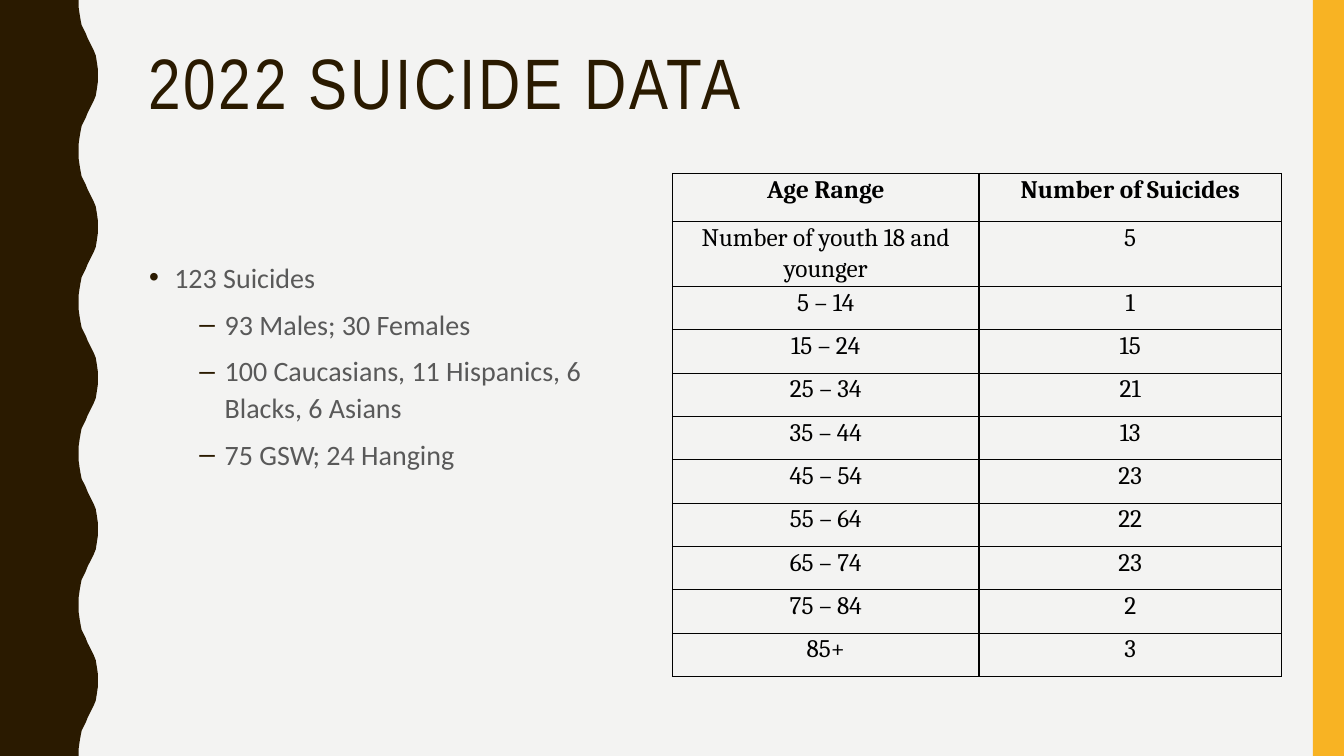
"""Build the slide on 2022 suicide data with a bullet list and an age table."""
from lxml import etree
from pptx import Presentation
from pptx.dml.color import RGBColor
from pptx.enum.shapes import MSO_SHAPE
from pptx.enum.text import MSO_ANCHOR, MSO_AUTO_SIZE, PP_ALIGN
from pptx.oxml.ns import qn
from pptx.util import Inches, Pt

RECT = MSO_SHAPE.RECTANGLE
TOP = MSO_ANCHOR.TOP
FIXED = MSO_AUTO_SIZE.NONE
LEFT, CENTER = PP_ALIGN.LEFT, PP_ALIGN.CENTER

TITLE = "2022 SUICIDE DATA"
POINTS = [
    (0, "123 Suicides"),
    (1, "93 Males; 30 Females"),
    (1, "100 Caucasians, 11 Hispanics, 6 Blacks, 6 Asians"),
    (1, "75 GSW; 24 Hanging"),
]
AGES = [
    ("Age Range", "Number of Suicides"),
    ("Number of youth 18 and younger", "5"),
    ("5 – 14", "1"),
    ("15 – 24", "15"),
    ("25 – 34", "21"),
    ("35 – 44", "13"),
    ("45 – 54", "23"),
    ("55 – 64", "22"),
    ("65 – 74", "23"),
    ("75 – 84", "2"),
    ("85+", "3"),
]
COLORS = {"back": "F3F3F2", "dark": "2A1A00", "gold": "F8B323",
          "text": "595959", "black": "000000"}
LEVELS = [("•", 0.25), ("–", 0.75)]
WIDTHS = (3.04, 3)
HEAD, ROW = 0.48, 0.43
WIDE, HIGH = 13.33, 7.5
PERIOD = 1.5
CURVE = [(0.78, 0), (0.78, 0.07), (0.79, 0.14), (0.8, 0.2), (0.81, 0.25),
         (0.83, 0.29), (0.85, 0.33), (0.87, 0.38), (0.89, 0.42), (0.91, 0.46),
         (0.93, 0.5), (0.95, 0.55), (0.96, 0.61), (0.97, 0.68), (0.97, 0.75)]


def color(name):
    return RGBColor.from_string(COLORS[name])


def paint(shape, name):
    shape.shadow.inherit = False
    shape.fill.solid()
    shape.fill.fore_color.rgb = color(name)
    shape.line.fill.background()


def write(para, text, font, size, name, align, space, bold=False):
    para.alignment = align
    para.line_spacing = space
    run = para.add_run()
    run.text = text
    run.font.name = font
    run.font.size = Pt(size)
    run.font.bold = bold
    run.font.color.rgb = color(name)
    return run


def bullet(para, level):
    mark, margin = LEVELS[level]
    para.level = level
    para.space_before = Pt(7)
    props = para._p.get_or_add_pPr()
    props.set("marL", str(Inches(margin)))
    props.set("indent", str(Inches(-0.25)))
    tint = etree.SubElement(props, qn("a:buClr"))
    etree.SubElement(tint, qn("a:srgbClr"), val=COLORS["dark"])
    etree.SubElement(props, qn("a:buFont"), typeface="Arial")
    etree.SubElement(props, qn("a:buChar"), char=mark)


def border(cell):
    props = cell._tc.get_or_add_tcPr()
    for place, side in enumerate(("lnL", "lnR", "lnT", "lnB")):
        line = etree.Element(qn(f"a:{side}"), w=str(Pt(1)))
        fill = etree.SubElement(line, qn("a:solidFill"))
        etree.SubElement(fill, qn("a:srgbClr"), val=COLORS["black"])
        props.insert(place, line)


def add_edges(slide):
    half = CURVE + [(x, PERIOD - y) for x, y in CURVE[-2::-1]]
    wave = [(x, y + turn * PERIOD)
            for turn in range(int(HIGH / PERIOD)) for x, y in half]
    spots = [(Inches(x), Inches(y)) for x, y in wave + [(0, HIGH)]]
    form = slide.shapes.build_freeform(0, 0)
    form.add_line_segments(spots, close=True)
    paint(form.convert_to_shape(), "dark")
    bar = slide.shapes.add_shape(
        RECT, Inches(13.02), 0, Inches(0.31), Inches(HIGH))
    paint(bar, "gold")


def add_title(slide):
    title = slide.shapes.title
    title.left, title.top = Inches(1.37), Inches(0.42)
    title.width, title.height = Inches(11.13), Inches(1.63)
    frame = title.text_frame
    frame.vertical_anchor = TOP
    frame.auto_size = FIXED
    run = write(frame.paragraphs[0], TITLE, "Arial Narrow", 51, "dark", LEFT, 0.9)
    run.font._element.set("spc", "200")


def add_points(slide):
    box = slide.shapes.add_textbox(
        Inches(1.38), Inches(2.5), Inches(5.25), Inches(3.96))
    frame = box.text_frame
    frame.word_wrap = True
    for index, (level, text) in enumerate(POINTS):
        para = frame.add_paragraph() if index else frame.paragraphs[0]
        write(para, text, "Calibri", 20, "text", LEFT, 1.1)
        bullet(para, level)


def add_ages(slide):
    high = HEAD + ROW * (len(AGES) - 1)
    table = slide.shapes.add_table(
        len(AGES), len(WIDTHS), Inches(6.67), Inches(1.72),
        Inches(sum(WIDTHS)), Inches(high)).table
    table.horz_banding = False
    for column, width in zip(table.columns, WIDTHS):
        column.width = Inches(width)
    for index, (row, texts) in enumerate(zip(table.rows, AGES)):
        row.height = Inches(ROW if index else HEAD)
        for cell, text in zip(row.cells, texts):
            cell.margin_left = cell.margin_right = Inches(0.06)
            cell.margin_top = cell.margin_bottom = 0
            cell.vertical_anchor = TOP
            cell.fill.background()
            border(cell)
            write(cell.text_frame.paragraphs[0], text, "Cambria", 18, "black",
                  CENTER, 1.07, index == 0)


def main():
    deck = Presentation()
    deck.slide_width, deck.slide_height = Inches(WIDE), Inches(HIGH)
    slide = deck.slides.add_slide(deck.slide_layouts[5])
    back = slide.background.fill
    back.solid()
    back.fore_color.rgb = color("back")
    add_edges(slide)
    add_title(slide)
    add_points(slide)
    add_ages(slide)
    deck.save("out.pptx")


if __name__ == "__main__":
    main()
